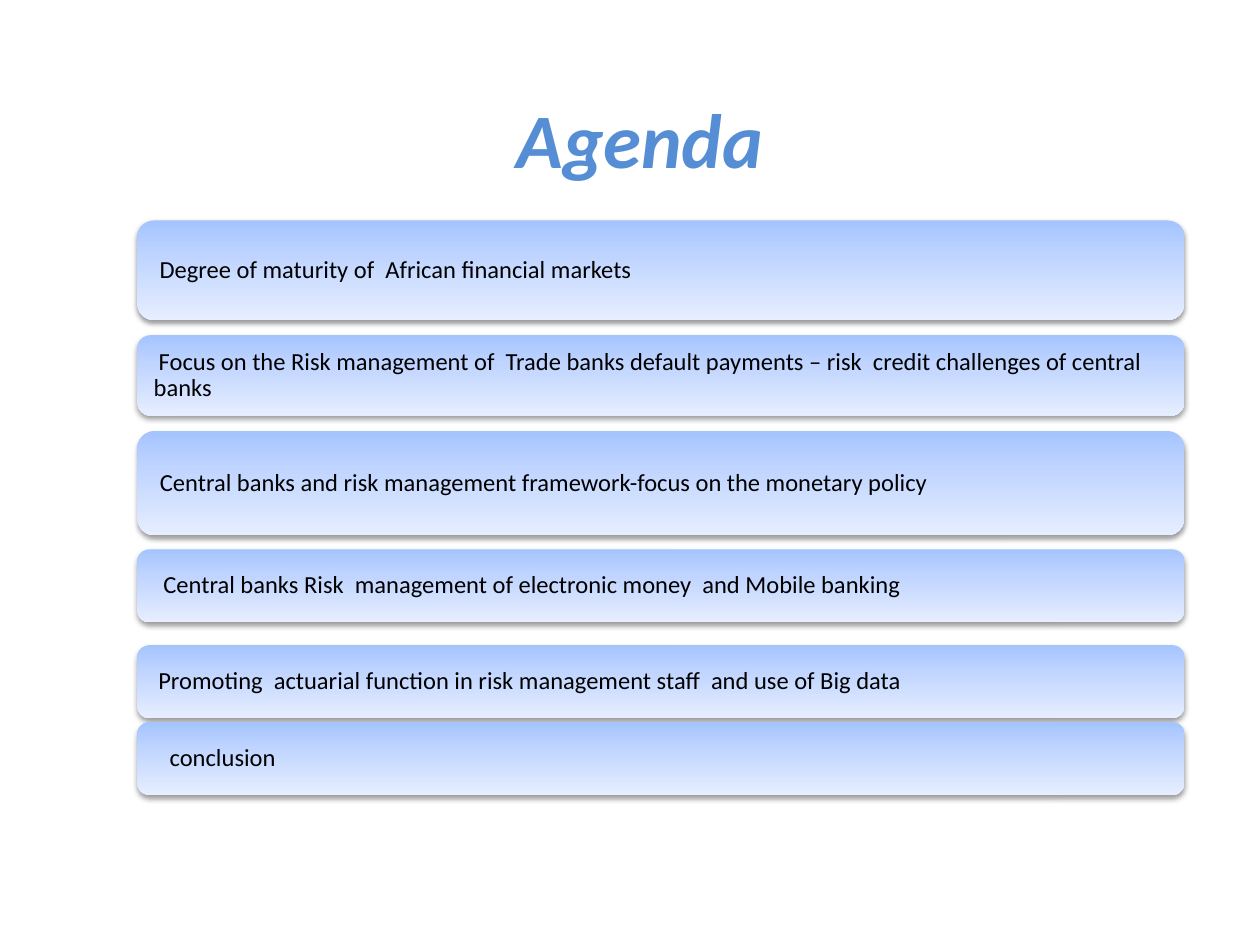
from lxml import etree
from pptx import Presentation
from pptx.dml.color import RGBColor
from pptx.enum.shapes import MSO_SHAPE
from pptx.enum.text import MSO_ANCHOR, PP_ALIGN
from pptx.oxml import parse_xml
from pptx.oxml.ns import nsdecls, qn
from pptx.util import Inches, Pt

TITLE = "Agenda"
# text, top, height, first-line indent (inches)
AGENDA = [
    ("Degree of maturity of  African financial markets", 1.75, 0.79, 0.04),
    ("Focus on the Risk management of  Trade banks default payments – risk  "
     "credit challenges of central banks", 2.66, 0.64, 0.04),
    ("Central banks and risk management framework-focus on the monetary policy",
     3.42, 0.83, 0.04),
    ("Central banks Risk  management of electronic money  and Mobile banking",
     4.36, 0.58, 0.08),
    ("Promoting  actuarial function in risk management staff  and use of Big data",
     5.12, 0.58, 0.04),
    ("conclusion", 5.73, 0.58, 0.13),
]
COLORS = {"title": "558ED5", "text": "000000", "shadow": "000000"}
GRADIENT = [(0, "A4C4FF"), (35, "BFD4FF"), (100, "E6EEFF")]
FONT = "Calibri"
LEFT, WIDTH = 1.09, 8.31
INSET = 0.1


def style_run(run, size, color):
    run.font.name = FONT
    run.font.size = Pt(size)
    run.font.color.rgb = RGBColor.from_string(color)


def fill_gradient(shape):
    """Fill from top to bottom with the three gradient stops."""
    shape.fill.gradient()
    shape.fill.gradient_angle = 270
    stops = shape._element.spPr.find(qn("a:gradFill")).find(qn("a:gsLst"))
    for stop in list(stops):
        stops.remove(stop)
    for position, color in GRADIENT:
        stop = etree.SubElement(stops, qn("a:gs"), pos=str(position * 1000))
        etree.SubElement(stop, qn("a:srgbClr"), val=color)


def add_shadow(shape):
    shape._element.spPr.append(parse_xml(
        f'<a:effectLst {nsdecls("a")}>'
        f'<a:outerShdw blurRad="{Pt(3.1)}" dist="{Pt(1.6)}" dir="5400000" rotWithShape="0">'
        f'<a:srgbClr val="{COLORS["shadow"]}"><a:alpha val="38000"/></a:srgbClr>'
        '</a:outerShdw></a:effectLst>'))


def add_agenda_bar(page, text, top, height, indent):
    bar = page.shapes.add_shape(MSO_SHAPE.ROUNDED_RECTANGLE, Inches(LEFT), Inches(top),
                                Inches(WIDTH), Inches(height))
    fill_gradient(bar)
    bar.line.fill.background()
    add_shadow(bar)

    frame = bar.text_frame
    frame.text = text
    frame.word_wrap = True
    frame.vertical_anchor = MSO_ANCHOR.MIDDLE
    frame.margin_left = frame.margin_right = Inches(INSET)
    frame.margin_top = frame.margin_bottom = Inches(INSET)
    para = frame.paragraphs[0]
    para.alignment = PP_ALIGN.LEFT
    para.line_spacing = 0.9
    para._p.get_or_add_pPr().set("indent", str(Inches(indent)))
    style_run(para.runs[0], 14, COLORS["text"])


def add_title(page):
    title = page.shapes.title
    title.left, title.top = Inches(1.09), Inches(0.59)
    title.width, title.height = Inches(7.98), Inches(1)
    title.text_frame.text = TITLE
    title.text_frame.vertical_anchor = MSO_ANCHOR.MIDDLE
    para = title.text_frame.paragraphs[0]
    para.alignment = PP_ALIGN.CENTER
    span = para.runs[0]
    style_run(span, 44, COLORS["title"])
    span.font.bold = span.font.italic = True


def main():
    deck = Presentation()
    deck.slide_width, deck.slide_height = Inches(10), Inches(7.5)
    page = deck.slides.add_slide(deck.slide_layouts[5])
    add_title(page)
    for item in AGENDA:
        add_agenda_bar(page, *item)
    deck.save("out.pptx")


if __name__ == "__main__":
    main()
